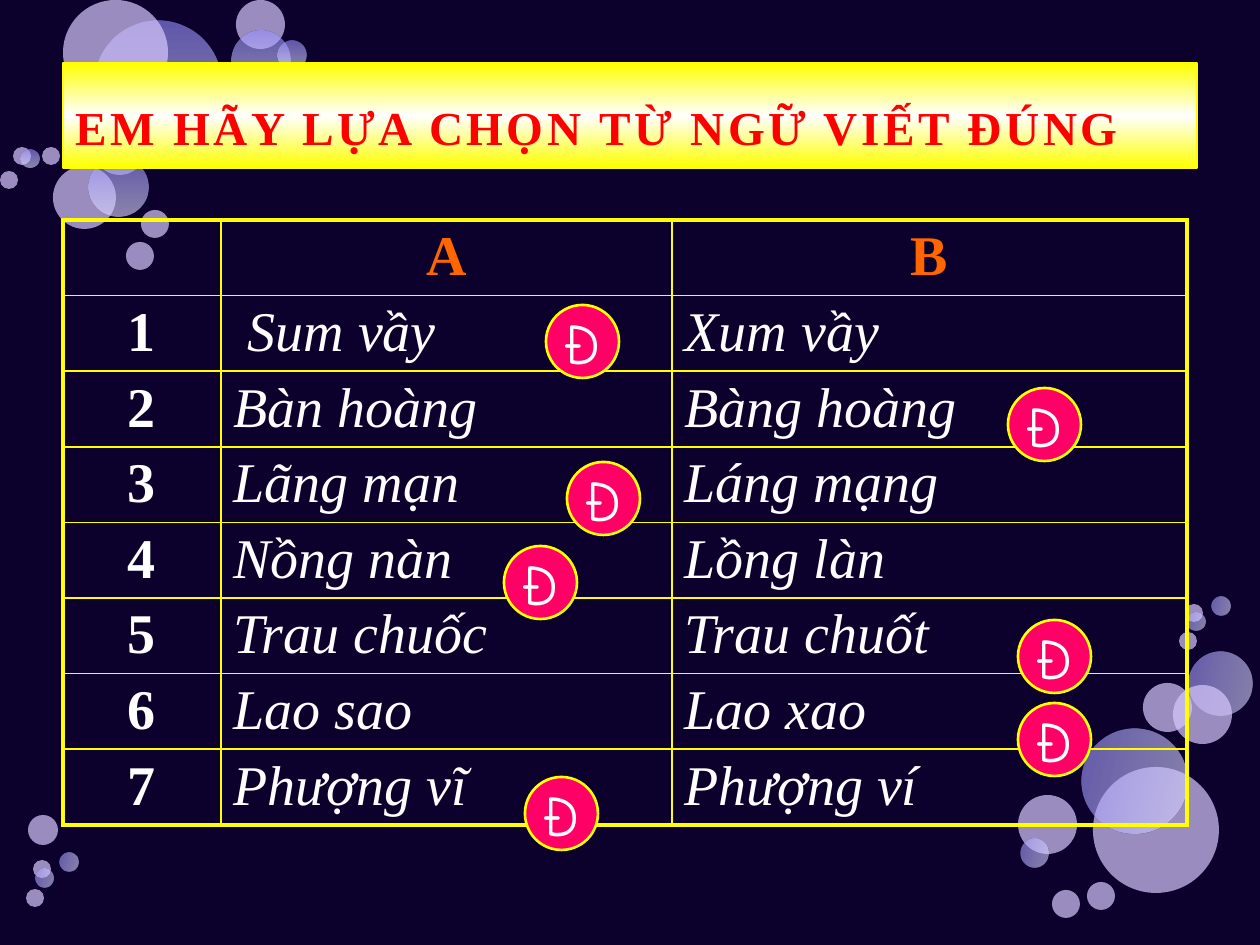
from lxml.etree import SubElement as Sub
from pptx import Presentation
from pptx.dml.color import RGBColor as RGB
from pptx.enum.shapes import MSO_SHAPE as Kind
from pptx.enum.text import MSO_ANCHOR as Anchor, PP_ALIGN as Align
from pptx.oxml.ns import qn
from pptx.util import Emu, Pt

NIGHT = RGB(0x0C, 0x00, 0x2C)
YELLOW = RGB(0xFF, 0xFF, 0x00)
WHITE = RGB(0xFF, 0xFF, 0xFF)
RED = RGB(0xFF, 0x00, 0x00)
ORANGE = RGB(0xFF, 0x66, 0x00)
PINK = RGB(0xFF, 0x00, 0x66)
LILAC = RGB(0xD7, 0xC8, 0xFE)
BLUES = [RGB(0x98, 0x90, 0xFF), RGB(0xBF, 0xBB, 0xFF), RGB(0xE0, 0xDE, 0xFF)]
SERIF, COMIC = "Times New Roman", "Comic Neue"

TITLE = "EM HÃY LỰA CHỌN TỪ NGỮ VIẾT ĐÚNG"
HEADS = ["", "A", "B"]
PAIRS = [
    (" Sum vầy", "Xum vầy"),
    ("Bàn hoàng", "Bàng hoàng"),
    ("Lãng mạn", "Láng mạng"),
    ("Nồng nàn", "Lồng làn"),
    ("Trau chuốc", "Trau chuốt"),
    ("Lao sao", "Lao xao"),
    ("Phượng vĩ", "Phượng ví"),
]
COLS = [158, 451, 515]
TABLE_H = 605

# Left and top of each "right answer" badge
MARK, MARK_D = "Đ", 73
MARKS = [(546, 305), (1018, 703), (1018, 620), (504, 546),
         (1008, 388), (567, 462), (525, 777)]

# Bubbles, back to front: left, top, diameter, shaded or plain
BUBBLES = [
    (95, 21, 126, 1), (53, 166, 63, 0), (95, 126, 49, 1), (89, 158, 59, 1),
    (63, 0, 105, 0), (236, 0, 49, 0), (231, 31, 59, 1), (278, 41, 28, 1),
    (141, 210, 28, 0), (13, 147, 18, 0), (126, 242, 28, 0), (0, 171, 18, 0),
    (21, 150, 18, 1), (42, 147, 18, 0),
    (1093, 767, 126, 0), (1189, 652, 63, 1), (1143, 683, 49, 0),
    (1173, 685, 59, 0), (1082, 729, 105, 1), (28, 815, 30, 0),
    (1018, 795, 59, 0), (1021, 839, 28, 1), (1052, 890, 28, 0),
    (1185, 604, 18, 0), (1087, 882, 28, 0), (1212, 597, 18, 1),
    (1187, 613, 18, 1), (1179, 632, 18, 0), (33, 860, 18, 0),
    (60, 853, 18, 1), (35, 869, 18, 1), (26, 889, 18, 0),
]
LOWER, TURN = 500, 283.3    # bubbles below this height are turned


def px(n):
    return Emu(round(n * 914400 / 126))


def tint(node, color, alpha=100):
    clr = Sub(node, qn("a:srgbClr"), val=str(color))
    if alpha < 100:
        Sub(clr, qn("a:alpha"), val=str(alpha * 1000))


def shade(shape, colors, alpha=100):
    """Fill from top to bottom with evenly spaced colours."""
    shape.fill.gradient()
    grad = shape._element.spPr.find(qn("a:gradFill"))
    for kid in list(grad):
        grad.remove(kid)
    grad.set("rotWithShape", "1")
    stops = Sub(grad, qn("a:gsLst"))
    for i, color in enumerate(colors):
        pos = 100000 * i // (len(colors) - 1)
        tint(Sub(stops, qn("a:gs"), pos=str(pos)), color, alpha)
    Sub(grad, qn("a:lin"), ang="5400000", scaled="0")


def glaze(shape, color, alpha=100):
    shape.fill.solid()
    shape.fill.fore_color.rgb = color
    clr = shape._element.spPr.find(qn("a:solidFill"))[0]
    if alpha < 100:
        Sub(clr, qn("a:alpha"), val=str(alpha * 1000))


def add(slide, kind, x, y, w, h, line=None):
    shape = slide.shapes.add_shape(kind, px(x), px(y), px(w), px(h))
    shape.shadow.inherit = False
    if line is None:
        shape.line.fill.background()
    else:
        shape.line.color.rgb = line
        shape.line.width = Pt(1.5)
    return shape


def write(frame, text, size=32, font=SERIF, color=WHITE, bold=False,
          italic=False, align=Align.LEFT, space=0):
    para = frame.paragraphs[0]
    para.alignment = align
    run = para.add_run()
    run.text = text
    face = run.font
    face.size, face.name, face.bold, face.italic = Pt(size), font, bold, italic
    face.color.rgb = color
    if space:
        run._r.get_or_add_rPr().set("spc", str(space * 100))


def border(cell, sides):
    props = cell._tc.get_or_add_tcPr()
    for i, (side, width) in enumerate(sides.items()):
        line = Sub(props, qn("a:ln" + side), w=str(Pt(width)))
        tint(Sub(line, qn("a:solidFill")), YELLOW)
        props.remove(line)
        props.insert(i, line)


def bubbles(slide):
    for x, y, d, shaded in BUBBLES:
        ball = add(slide, Kind.OVAL, x, y, d, d)
        if shaded:
            shade(ball, BLUES, 60)
            ball.rotation = TURN if y > LOWER else 0
        else:
            glaze(ball, LILAC, 70)


def banner(slide):
    bar = add(slide, Kind.RECTANGLE, 63, 63, 1134, 105, line=YELLOW)
    shade(bar, [YELLOW, WHITE, YELLOW])
    frame = bar.text_frame
    frame.word_wrap = True
    frame.vertical_anchor = Anchor.MIDDLE
    frame.margin_top = px(28)
    write(frame, TITLE, size=27, color=RED, bold=True, space=2)


def words(slide):
    rows = [HEADS] + [(str(n), *pair) for n, pair in enumerate(PAIRS, 1)]
    last, end = len(rows) - 1, len(COLS) - 1
    table = slide.shapes.add_table(len(rows), len(COLS), px(63), px(220),
                                   px(sum(COLS)), px(TABLE_H)).table
    table.first_row = table.horz_banding = False
    for col, width in zip(table.columns, COLS):
        col.width = px(width)
    for r, row in enumerate(rows):
        table.rows[r].height = px(TABLE_H / len(rows))
        for c, text in enumerate(row):
            cell = table.cell(r, c)
            cell.fill.background()
            cell.margin_top, cell.margin_bottom = px(6), px(4)
            edges = {"L": c == 0, "R": c == end, "T": r == 0, "B": r == last}
            border(cell, {s: 2.25 if outer else 1 for s, outer in edges.items()})
            label = r == 0 or c == 0
            if text:
                write(cell.text_frame, text, bold=label, italic=not label,
                      color=WHITE if r else ORANGE,
                      align=Align.CENTER if label else Align.LEFT)


def badges(slide):
    for x, y in MARKS:
        badge = add(slide, Kind.OVAL, x, y, MARK_D, MARK_D, line=YELLOW)
        glaze(badge, PINK)
        frame = badge.text_frame
        frame.word_wrap = False
        frame.vertical_anchor = Anchor.MIDDLE
        write(frame, MARK, font=COMIC, align=Align.CENTER)


def main():
    deck = Presentation()
    deck.slide_width, deck.slide_height = px(1260), px(945)
    slide = deck.slides.add_slide(deck.slide_layouts[6])
    slide.background.fill.solid()
    slide.background.fill.fore_color.rgb = NIGHT
    for part in (bubbles, banner, words, badges):
        part(slide)
    deck.save("out.pptx")


if __name__ == "__main__":
    main()
